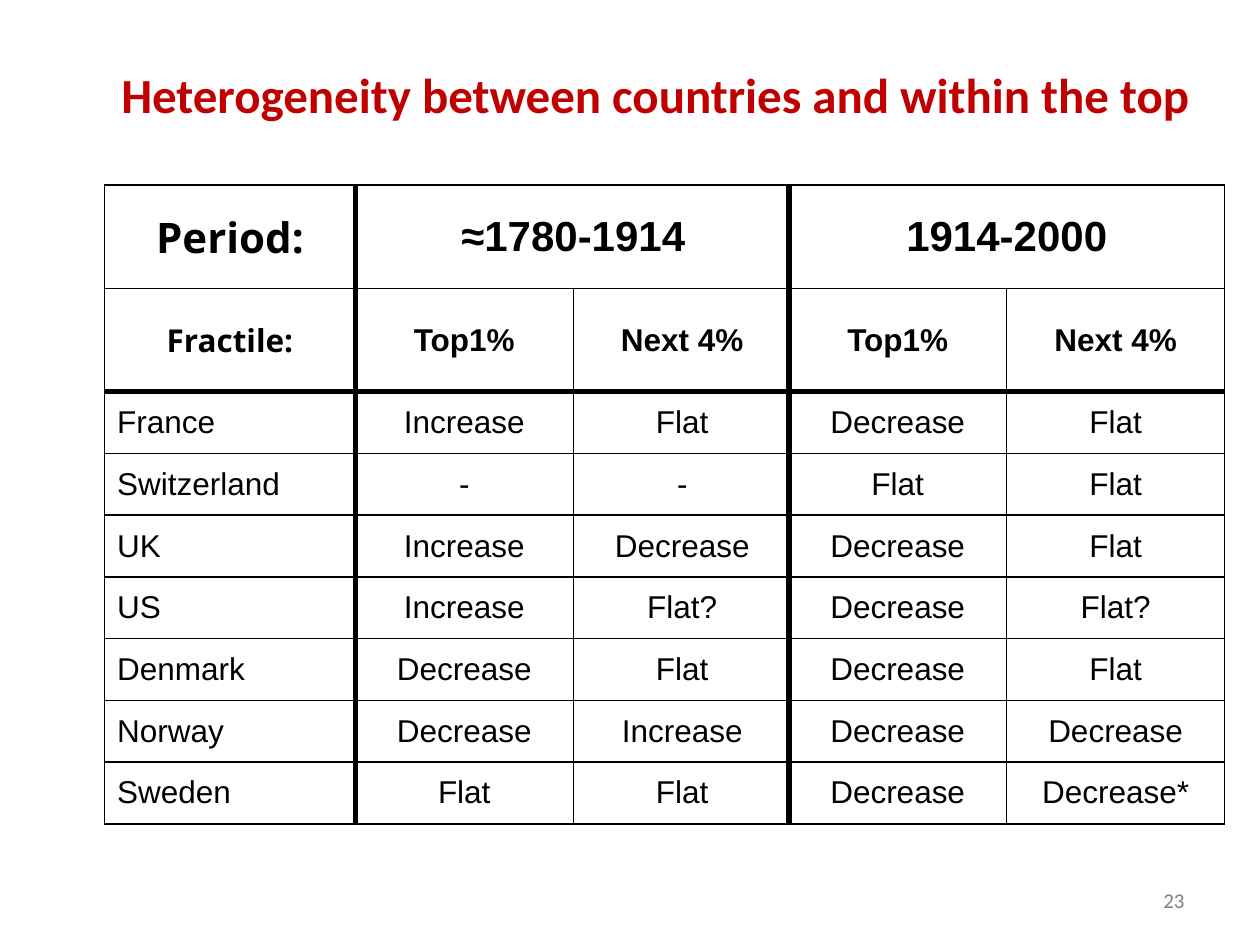
import pptx
import pptx.util
import pptx.dml.color
import pptx.enum.text
import pptx.oxml
import pptx.oxml.ns

Inches, Pt = pptx.util.Inches, pptx.util.Pt
RGBColor = pptx.dml.color.RGBColor
ALIGN = pptx.enum.text.PP_ALIGN
MIDDLE = pptx.enum.text.MSO_ANCHOR.MIDDLE

RED = RGBColor(0xC0, 0x00, 0x00)
BLACK = RGBColor(0x00, 0x00, 0x00)
GRAY = RGBColor(0x80, 0x80, 0x80)

TITLE = "Heterogeneity between countries and within the top"
PAGE_NUMBER = "23"
EARLY_ROWS = [
    ("Period:", "≈1780-1914", ""),
    ("Fractile:", "Top1%", "Next 4%"),
    ("France", "Increase", "Flat"),
    ("Switzerland", "-", "-"),
    ("UK", "Increase", "Decrease"),
    ("US", "Increase", "Flat?"),
    ("Denmark", "Decrease", "Flat"),
    ("Norway", "Decrease", "Increase"),
    ("Sweden", "Flat", "Flat"),
]
LATE_ROWS = [
    ("1914-2000", ""),
    ("Top1%", "Next 4%"),
    ("Decrease", "Flat"),
    ("Flat", "Flat"),
    ("Decrease", "Flat"),
    ("Decrease", "Flat?"),
    ("Decrease", "Flat"),
    ("Decrease", "Decrease"),
    ("Decrease", "Decrease*"),
]

TABLE_TOP = 1.47
HEADER_ROWS, HEADER_H, BODY_H = 2, 0.82, 0.49
LABEL_W, VALUE_W = 1.99, 1.73
HANGING = Inches(0.38)
THIN, THICK = 1, 3


def write(tf, text, align, color, **font):
    tf.word_wrap = True
    p = tf.paragraphs[0]
    p.alignment = align
    r = p.add_run()
    r.text = text
    r.font.color.rgb = color
    for name, value in font.items():
        setattr(r.font, name, value)
    return p


def add_text(s, box, text, align, color, **font):
    sp = s.shapes.add_textbox(*map(Inches, box))
    sp.text_frame.vertical_anchor = MIDDLE
    write(sp.text_frame, text, align, color, **font)


def set_borders(cell, weights):
    tc_pr = cell._tc.get_or_add_tcPr()
    for side, weight in weights.items():
        tc_pr.append(pptx.oxml.parse_xml(
            f'<a:ln{side} {pptx.oxml.ns.nsdecls("a")} w="{Pt(weight)}">'
            f'<a:solidFill><a:srgbClr val="{BLACK}"/></a:solidFill></a:ln{side}>'))


def add_period_table(s, left, rows, widths, divider):
    """Divider is the index of the column edge drawn thick."""
    heights = [HEADER_H if i < HEADER_ROWS else BODY_H for i in range(len(rows))]
    table = s.shapes.add_table(
        len(rows), len(widths), Inches(left), Inches(TABLE_TOP),
        Inches(sum(widths)), Inches(sum(heights))).table
    table.first_row = table.horz_banding = False
    for column, width in zip(table.columns, widths):
        column.width = Inches(width)
    for row, height in zip(table.rows, heights):
        row.height = Inches(height)

    def weight(edge, thick_edge):
        return THICK if edge == thick_edge else THIN

    for i, row in enumerate(rows):
        header = i < HEADER_ROWS
        for j, text in enumerate(row):
            cell = table.cell(i, j)
            cell.vertical_anchor = MIDDLE
            set_borders(cell, {
                "L": weight(j, divider), "R": weight(j + 1, divider),
                "T": weight(i, HEADER_ROWS), "B": weight(i + 1, HEADER_ROWS)})
            cell.fill.background()
            if not text:
                continue
            label = j < divider
            size = 24 if i == 0 else 18
            p = write(cell.text_frame, text,
                      ALIGN.LEFT if label and not header else ALIGN.CENTER,
                      BLACK, size=Pt(size), bold=header,
                      name="Noto Sans" if label and header else "Arial")
            if label and header:
                p.space_before = Pt(0.2 * size)
            else:
                p_pr = p._p.get_or_add_pPr()
                p_pr.set("marL", str(HANGING))
                p_pr.set("indent", str(-HANGING))
    table.cell(0, divider).merge(table.cell(0, len(widths) - 1))


prs = pptx.Presentation()
prs.slide_width, prs.slide_height = Inches(10), Inches(7.5)
s = prs.slides.add_slide(prs.slide_layouts[6])

add_text(s, (0.75, 0.28, 8.9, 0.93), TITLE, ALIGN.CENTER, RED,
         size=Pt(28), bold=True, name="Calibri")
add_period_table(s, 0.83, EARLY_ROWS, [LABEL_W, VALUE_W, VALUE_W], 1)
add_text(s, (7.17, 6.94, 2.33, 0.41), PAGE_NUMBER, ALIGN.RIGHT, GRAY,
         size=Pt(12), name="Calibri")
add_period_table(s, 6.26, LATE_ROWS, [VALUE_W, VALUE_W], 0)

prs.save("out.pptx")
